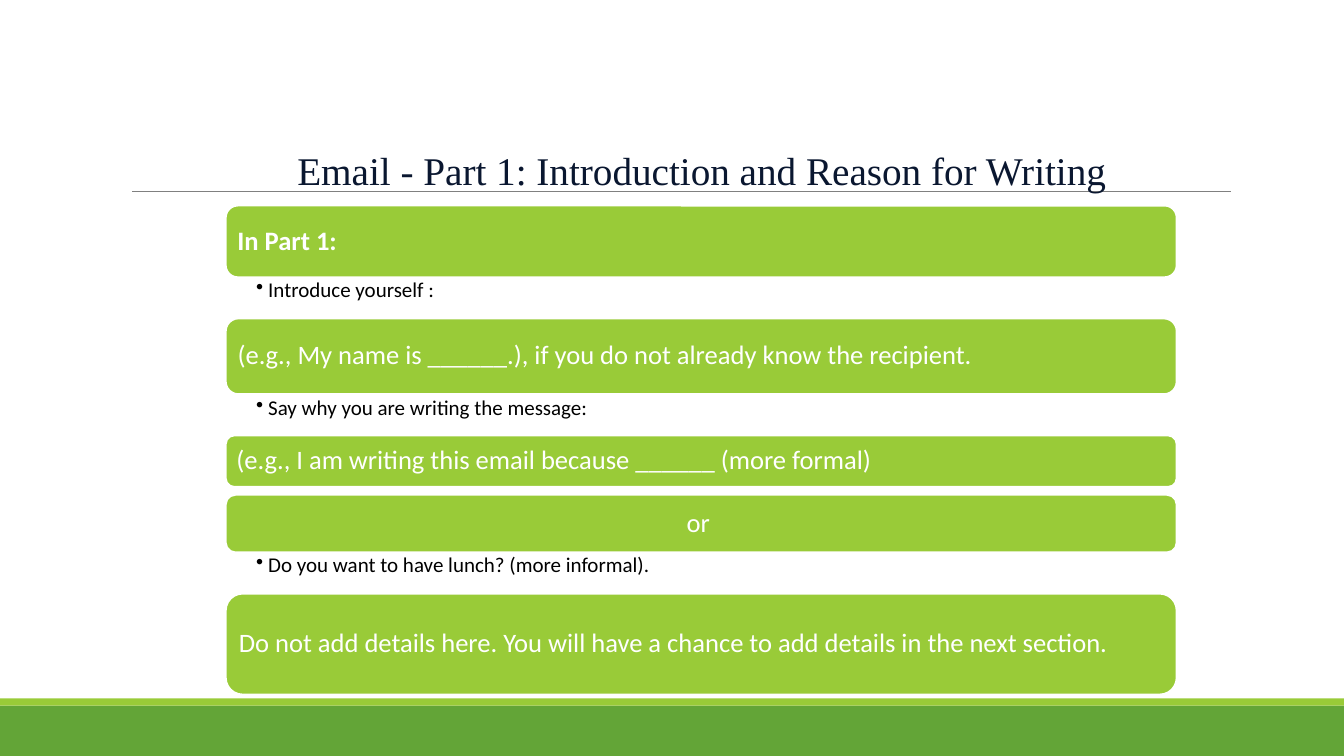
from dataclasses import dataclass

from lxml import etree
from pptx import Presentation, util as u
from pptx.dml.color import RGBColor
from pptx.enum import shapes, text
from pptx.oxml.ns import qn

LIME, GREEN, WHITE = "99CB38", "63A537", "FFFFFF"
LEFT, WIDTH = 2.24, 9.43


@dataclass
class Bar:
    top: float
    high: float
    words: str
    bold: bool = False
    align: text.PP_ALIGN = text.PP_ALIGN.LEFT


@dataclass
class Point:
    top: float
    words: str


ITEMS = [
    Bar(2.04, 0.71, "In Part 1:", bold=True),
    Point(2.74, "Introduce yourself :"),
    Bar(3.16, 0.75, "(e.g., My name is ______.), if you do not already know the recipient."),
    Point(3.91, "Say why you are writing the message:"),
    Bar(4.32, 0.51, "(e.g., I am writing this email because ______ (more formal)"),
    Bar(4.91, 0.57, "or ", align=text.PP_ALIGN.CENTER),
    Point(5.47, "Do you want to have lunch? (more informal)."),
    Bar(5.89, 1, "Do not add details here. You will have a chance to add details in the next section."),
]


def rgb(code: str) -> RGBColor:
    return RGBColor.from_string(code)


def box(slide, kind, left: float, top: float, wide: float, high: float, fill: str):
    """Draw a filled shape without line or shadow."""
    shape = slide.shapes.add_shape(kind, *map(u.Inches, (left, top, wide, high)))
    shape.shadow.inherit = False
    shape.fill.solid()
    shape.fill.fore_color.rgb = rgb(fill)
    shape.line.fill.background()
    return shape


def write(shape, words: str, size: float, color: str, pads: tuple, font: str = "Calibri",
          space: float = 0.9, bold: bool = False, align=text.PP_ALIGN.LEFT,
          anchor=text.MSO_ANCHOR.TOP):
    """Fill a shape with one paragraph; pads run left, top, right, bottom."""
    frame = shape.text_frame
    frame.word_wrap = True
    frame.vertical_anchor = anchor
    (frame.margin_left, frame.margin_top,
     frame.margin_right, frame.margin_bottom) = map(u.Inches, pads)
    para = frame.paragraphs[0]
    para.alignment = align
    para.line_spacing = space
    run = para.add_run()
    run.text = words
    run.font.name = font
    run.font.size = u.Pt(size)
    run.font.bold = bold
    run.font.color.rgb = rgb(color)
    return para


def add_bar(slide, bar: Bar) -> None:
    shape = box(slide, shapes.MSO_SHAPE.ROUNDED_RECTANGLE, LEFT, bar.top, WIDTH, bar.high, LIME)
    shape.line.color.rgb = rgb(WHITE)
    shape.line.width = u.Pt(1.25)
    write(shape, bar.words, 19, WHITE, (0.08,) * 4, bold=bar.bold, align=bar.align,
          anchor=text.MSO_ANCHOR.MIDDLE)


def add_point(slide, point: Point) -> None:
    area = slide.shapes.add_textbox(*map(u.Inches, (LEFT, point.top, WIDTH, 0.42)))
    para = write(area, point.words, 15, "000000", (0.3, 0.03, 0.15, 0.03))
    para.level = 1
    props = para._p.get_or_add_pPr()
    props.set("marL", str(u.Inches(0.12)))
    props.set("indent", str(u.Inches(-0.12)))
    etree.SubElement(props, qn("a:buChar")).set("char", "•")


def add_rule(slide) -> None:
    rule = slide.shapes.add_connector(
        shapes.MSO_CONNECTOR.STRAIGHT, *map(u.Inches, (1.31, 1.9, 12.21, 1.9)))
    rule.line.color.rgb = rgb("808080")
    rule.line.width = u.Pt(0.5)
    etree.SubElement(rule._element.spPr, qn("a:effectLst"))


def main() -> None:
    deck = Presentation()
    deck.slide_width, deck.slide_height = u.Inches(13.33), u.Inches(7.5)
    slide = deck.slides.add_slide(deck.slide_layouts[6])

    box(slide, shapes.MSO_SHAPE.RECTANGLE, 0, 7, 13.33, 0.5, GREEN)
    box(slide, shapes.MSO_SHAPE.RECTANGLE, 0, 6.93, 13.33, 0.07, LIME)
    add_rule(slide)

    title = slide.shapes.add_textbox(*map(u.Inches, (1.85, 1.47, 10.22, 0.85)))
    write(title, "Email - Part 1: Introduction and Reason for Writing", 28, "0A1730",
          (0.1, 0.05, 0.1, 0.05), font="Times New Roman", space=0.85,
          align=text.PP_ALIGN.CENTER)

    for item in ITEMS:
        if isinstance(item, Bar):
            add_bar(slide, item)
        else:
            add_point(slide, item)

    deck.save("out.pptx")


if __name__ == "__main__":
    main()
